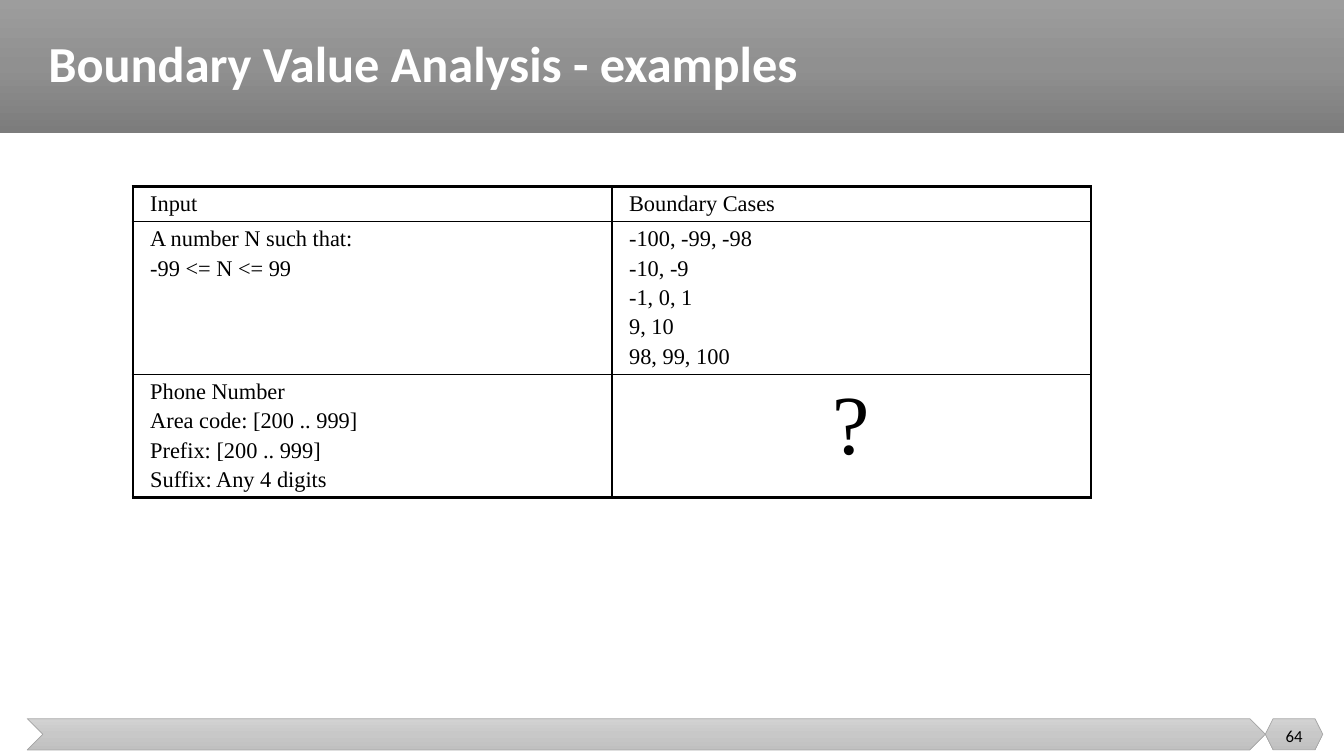
from copy import deepcopy
from dataclasses import dataclass

from pptx import Presentation
from pptx.dml.color import RGBColor
from pptx.enum import shapes, text
from pptx.oxml import ns, xmlchemy
from pptx.util import Inches, Pt


@dataclass(frozen=True)
class Theme:
    heading_font: str = "Calibri"
    table_font: str = "Times New Roman"
    header: tuple = ("9D9D9D", "909090", "7C7C7C")
    footer: tuple = ("D2D2D2", "C8C8C8", "C0C0C0")
    footer_line: str = "A5A5A5"
    light: str = "FFFFFF"
    dark: str = "000000"
    title_size: int = 36
    body_size: int = 16
    question_size: int = 60
    number_size: int = 12
    outer_border: float = 2.25
    inner_border: float = 1


THEME = Theme()
ROWS = [
    (["Input"], ["Boundary Cases"]),
    (["A number N such that:", "-99 <= N <= 99"],
     ["-100, -99, -98", "-10, -9", "-1, 0, 1", "9, 10", "98, 99, 100"]),
    (["Phone Number", "Area code: [200 .. 999]", "Prefix: [200 .. 999]",
      "Suffix: Any 4 digits"], ["?"]),
]
ROW_HEIGHTS = (0.35, 1.51, 1.22)
COLUMN_WIDTH = 4.75


def rgb(value):
    return RGBColor.from_string(value)


def format_runs(paragraph, font, size, color, bold=False):
    for run in paragraph.runs:
        run.font.name = font
        run.font.size = Pt(size)
        run.font.bold = bold
        run.font.color.rgb = rgb(color)


def fill_gradient(shape, colors):
    """Fill from top to bottom with three evenly spaced colours."""
    shape.fill.gradient()
    shape.fill.gradient_angle = 270
    stops = shape._element.spPr.find(".//" + ns.qn("a:gsLst"))
    stops.insert(1, deepcopy(stops[0]))
    for index, (stop, color) in enumerate(zip(shape.fill.gradient_stops, colors)):
        stop.position = index / 2
        stop.color.rgb = rgb(color)


def add_band(slide, preset, box, colors, line=None):
    band = slide.shapes.add_shape(preset, *map(Inches, box))
    band.shadow.inherit = False
    fill_gradient(band, colors)
    if line:
        band.line.color.rgb = rgb(line)
        band.line.width = Pt(0.5)
    else:
        band.line.fill.background()


def place_title(slide, wording):
    title = slide.shapes.title
    slide.shapes._spTree.append(title._element)  # in front of the header band
    title.left, title.top, title.width, title.height = map(Inches, (0.38, 0, 12.74, 1.32))
    frame = title.text_frame
    frame.text = wording
    frame.vertical_anchor = text.MSO_ANCHOR.MIDDLE
    paragraph = frame.paragraphs[0]
    paragraph.alignment = text.PP_ALIGN.LEFT
    paragraph.line_spacing = 0.9
    format_runs(paragraph, THEME.heading_font, THEME.title_size, THEME.light, bold=True)


def set_borders(cell, widths):
    """Draw left, right, top and bottom borders, in that order."""
    properties = cell._tc.get_or_add_tcPr()
    for index, (side, width) in enumerate(zip(("lnL", "lnR", "lnT", "lnB"), widths)):
        border = xmlchemy.OxmlElement(f"a:{side}")
        border.set("w", str(Pt(width)))
        fill = xmlchemy.OxmlElement("a:solidFill")
        color = xmlchemy.OxmlElement("a:srgbClr")
        color.set("val", THEME.dark)
        fill.append(color)
        border.append(fill)
        properties.insert(index, border)


def space_before_percent(paragraph, percent):
    spacing = xmlchemy.OxmlElement("a:spcBef")
    amount = xmlchemy.OxmlElement("a:spcPct")
    amount.set("val", str(percent * 1000))
    spacing.append(amount)
    paragraph._p.get_or_add_pPr().insert(0, spacing)


def fill_cell(cell, lines):
    cell.fill.background()
    cell.margin_left = cell.margin_right = Inches(0.17)
    cell.margin_top = cell.margin_bottom = Inches(0.05)
    cell.text_frame.text = "\n".join(lines)
    is_question = lines == ["?"]
    size = THEME.question_size if is_question else THEME.body_size
    for paragraph in cell.text_frame.paragraphs:
        if is_question:
            paragraph.alignment = text.PP_ALIGN.CENTER
        else:
            space_before_percent(paragraph, 20)
        format_runs(paragraph, THEME.table_font, size, THEME.dark)


def add_cases_table(slide):
    last_row, last_column = len(ROWS) - 1, len(ROWS[0]) - 1
    frame = slide.shapes.add_table(
        len(ROWS), len(ROWS[0]), Inches(1.32), Inches(1.85),
        Inches(COLUMN_WIDTH * len(ROWS[0])), Inches(sum(ROW_HEIGHTS)))
    table = frame.table
    table.first_row = table.horz_banding = False
    for column in table.columns:
        column.width = Inches(COLUMN_WIDTH)
    for r, (entries, height) in enumerate(zip(ROWS, ROW_HEIGHTS)):
        table.rows[r].height = Inches(height)
        for c, lines in enumerate(entries):
            cell = table.cell(r, c)
            fill_cell(cell, lines)
            on_edge = (c == 0, c == last_column, r == 0, r == last_row)
            set_borders(cell, [THEME.outer_border if edge else THEME.inner_border
                               for edge in on_edge])


def add_page_number(slide, number):
    box = slide.shapes.add_textbox(*map(Inches, (12.55, 7.1, 0.57, 0.4)))
    frame = box.text_frame
    frame.word_wrap = True
    frame.vertical_anchor = text.MSO_ANCHOR.MIDDLE
    frame.text = number
    frame.paragraphs[0].alignment = text.PP_ALIGN.CENTER
    format_runs(frame.paragraphs[0], THEME.heading_font, THEME.number_size, THEME.dark)


def main():
    deck = Presentation()
    deck.slide_width, deck.slide_height = Inches(13.33), Inches(7.5)
    slide = deck.slides.add_slide(deck.slide_layouts.get_by_name("Title Only"))
    preset = shapes.MSO_SHAPE
    add_band(slide, preset.RECTANGLE, (0, 0, 13.33, 1.32), THEME.header)
    add_band(slide, preset.CHEVRON, (0.27, 7.13, 12.28, 0.31), THEME.footer, THEME.footer_line)
    add_band(slide, preset.HEXAGON, (12.55, 7.13, 0.57, 0.31), THEME.footer, THEME.footer_line)
    place_title(slide, "Boundary Value Analysis - examples")
    add_cases_table(slide)
    add_page_number(slide, "64")
    deck.save("out.pptx")


if __name__ == "__main__":
    main()
